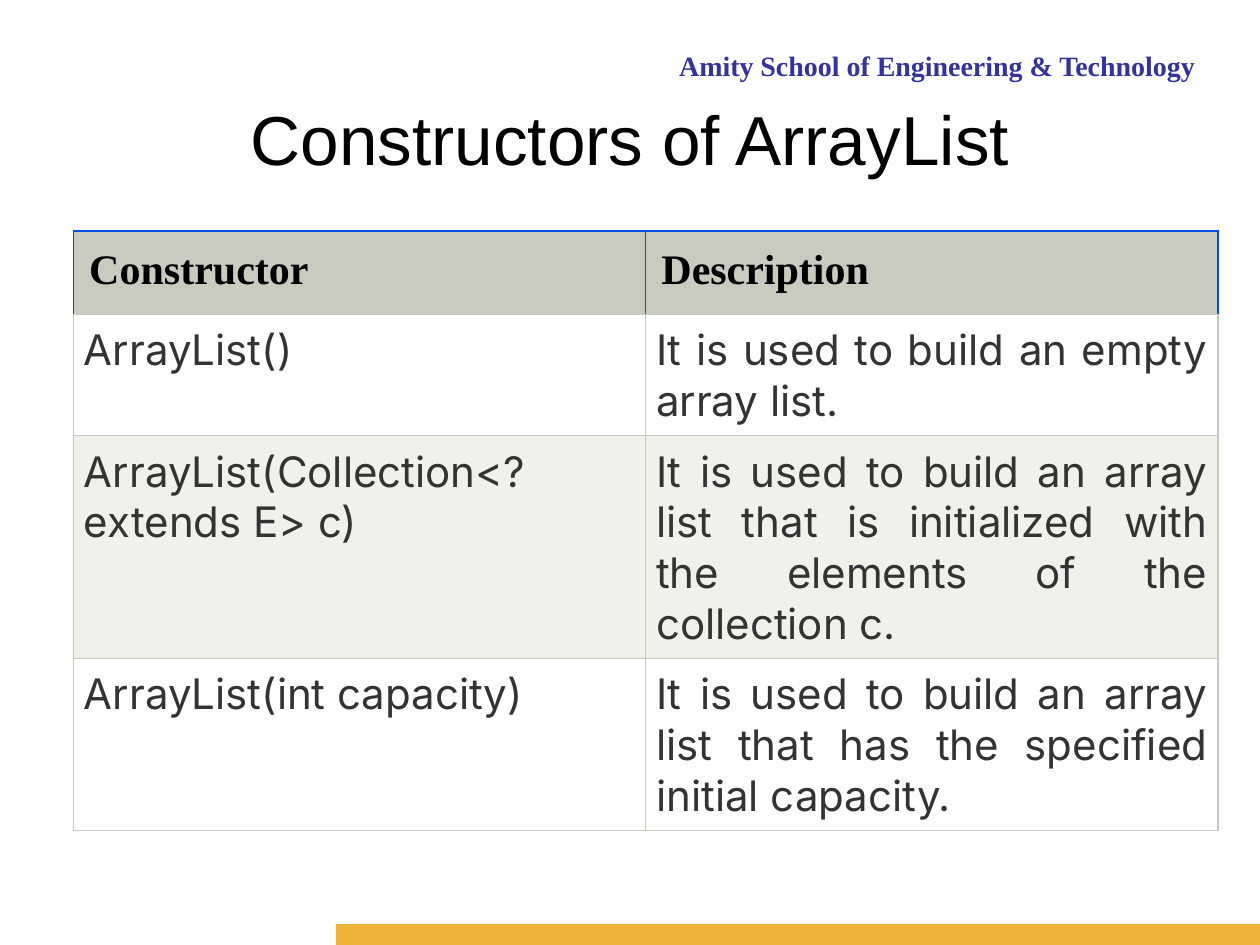
from dataclasses import dataclass

from lxml.etree import SubElement
from pptx import Presentation
from pptx.dml.color import RGBColor
from pptx.enum.shapes import MSO_SHAPE as Shape
from pptx.enum.text import MSO_ANCHOR as Anchor, PP_ALIGN as Align
from pptx.oxml.ns import qn
from pptx.util import Pt


@dataclass(frozen=True)
class Theme:
    serif: str = "Times New Roman"
    sans: str = "Arial"
    body: str = "Inter"
    ink: str = "000000"
    body_ink: str = "333333"
    school_ink: str = "333399"
    accent: str = "F1B43B"
    header_fill: str = "C7CCBE"
    header_line: str = "004EDF"
    grid_line: str = "C7CCBE"
    row_fills: tuple = ("FFFFFF", "EFF1EB")
    title_size: float = 39.6
    table_size: float = 24
    school_size: float = 16
    line_width: float = 0.75


class SlideBuilder:
    def __init__(self, slide, theme):
        self.slide = slide
        self.theme = theme

    def format_text(self, para, font, size, color, bold=False, align=Align.LEFT):
        para.alignment = align
        for span in para.runs:
            span.font.name = font
            span.font.size = Pt(size)
            span.font.bold = bold
            span.font.color.rgb = RGBColor.from_string(color)

    def title(self, text, left, top, width, height):
        box = self.slide.shapes.title
        box.left, box.top, box.width, box.height = map(Pt, (left, top, width, height))
        frame = box.text_frame
        frame.text = text
        frame.vertical_anchor = Anchor.MIDDLE
        theme = self.theme
        self.format_text(frame.paragraphs[0], theme.sans, theme.title_size,
                         theme.ink, align=Align.CENTER)

    def school_name(self, text, left, top, width, height):
        box = self.slide.shapes.add_textbox(*map(Pt, (left, top, width, height)))
        frame = box.text_frame
        frame.word_wrap = True
        frame.text = text
        theme = self.theme
        self.format_text(frame.paragraphs[0], theme.serif, theme.school_size,
                         theme.school_ink, bold=True, align=Align.RIGHT)

    def bar(self, left, top, width, height):
        bar = self.slide.shapes.add_shape(
            Shape.RECTANGLE, *map(Pt, (left, top, width, height)))
        bar.shadow.inherit = False
        bar.fill.solid()
        bar.fill.fore_color.rgb = RGBColor.from_string(self.theme.accent)
        bar.line.fill.background()

    def borders(self, cell, sides, bottom):
        """Draw the left, right and top edges in one colour, the bottom in another."""
        properties = cell._tc.get_or_add_tcPr()
        edges = {"lnL": sides, "lnR": sides, "lnT": sides, "lnB": bottom}
        for position, (tag, color) in enumerate(edges.items()):
            line = SubElement(properties, qn(f"a:{tag}"),
                              w=str(Pt(self.theme.line_width)))
            fill = SubElement(line, qn("a:solidFill"))
            SubElement(fill, qn("a:srgbClr"), val=color)
            properties.insert(position, line)

    def cell(self, cell, text, is_header, fill):
        theme = self.theme
        cell.text = text
        inset = Pt(9 if is_header else 6)
        cell.margin_left = cell.margin_right = inset
        cell.margin_top = cell.margin_bottom = inset
        cell.fill.solid()
        cell.fill.fore_color.rgb = RGBColor.from_string(fill)
        para = cell.text_frame.paragraphs[0]
        if is_header:
            self.format_text(para, theme.serif, theme.table_size, theme.ink, bold=True)
        else:
            self.format_text(para, theme.body, theme.table_size, theme.body_ink,
                             align=Align.JUSTIFY)
        self.borders(cell, theme.header_line if is_header else theme.grid_line,
                     theme.grid_line)

    def table(self, rows, row_heights, left, top, width):
        theme = self.theme
        columns = len(rows[0])
        table = self.slide.shapes.add_table(
            len(rows), columns, Pt(left), Pt(top), Pt(width), Pt(sum(row_heights))).table
        for column in table.columns:
            column.width = Pt(width / columns)
        for number, (texts, height) in enumerate(zip(rows, row_heights)):
            table.rows[number].height = Pt(height)
            is_header = number == 0
            fill = theme.header_fill if is_header else theme.row_fills[(number - 1) % 2]
            for column, text in enumerate(texts):
                self.cell(table.cell(number, column), text, is_header, fill)


CONSTRUCTORS = [
    ("Constructor", "Description"),
    ("ArrayList()", "It is used to build an empty array list."),
    ("ArrayList(Collection<? extends E> c)",
     "It is used to build an array list that is initialized with "
     "the elements of the collection c."),
    ("ArrayList(int capacity)",
     "It is used to build an array list that has the specified initial capacity."),
]


def main():
    deck = Presentation()
    deck.slide_width, deck.slide_height = Pt(720), Pt(540)
    title_only = deck.slide_layouts[5]
    page = SlideBuilder(deck.slides.add_slide(title_only), Theme())
    page.school_name("Amity School of Engineering & Technology", 324, 24, 366, 24)
    page.bar(192, 528, 528, 12)
    page.title("Constructors of ArrayList", 36, 48, 648, 62)
    page.table(CONSTRUCTORS, (47.5, 65.5, 91.5, 91.5), 42, 132, 654)
    deck.save("out.pptx")


if __name__ == "__main__":
    main()
